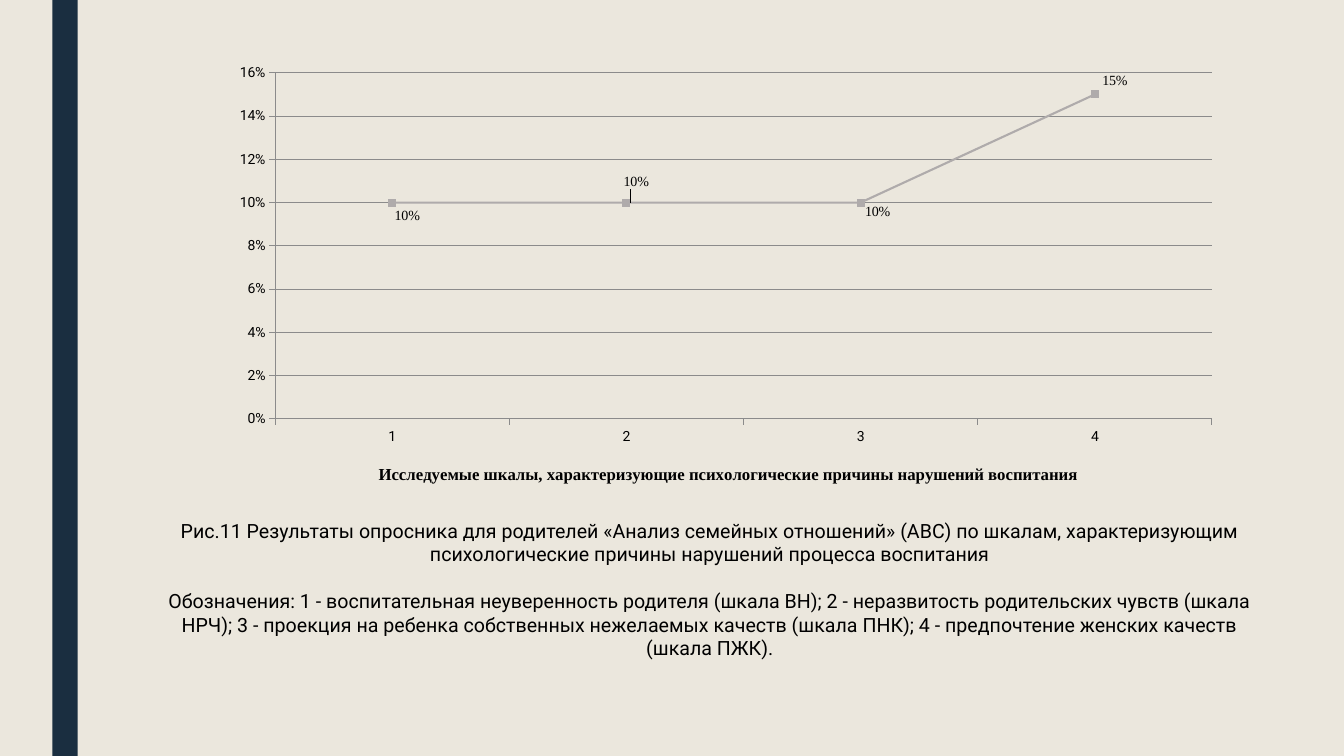
from pptx import Presentation
from pptx.chart.data import CategoryChartData
from pptx.dml.color import RGBColor
from pptx.enum.chart import XL_CHART_TYPE as ChartType
from pptx.enum.chart import XL_LABEL_POSITION as LabelPosition
from pptx.enum.chart import XL_MARKER_STYLE as MarkerStyle
from pptx.enum.chart import XL_TICK_MARK as TickMark
from pptx.enum.shapes import MSO_SHAPE as ShapeType
from pptx.enum.text import PP_ALIGN as Align
from pptx.oxml import parse_xml
from pptx.oxml.ns import nsdecls
from pptx.util import Cm, Pt

BACKGROUND = RGBColor(0xEB, 0xE7, 0xDD)
NAVY = RGBColor(0x1A, 0x2E, 0x40)
BLACK = RGBColor(0, 0, 0)
SERIES_GRAY = RGBColor(0xAF, 0xAB, 0xAB)
AXIS_GRAY = RGBColor(0x8B, 0x8B, 0x8B)

TICK_FONT = {"name": "Roboto", "size": Pt(10)}
LABEL_FONT = {"name": "Times New Roman", "size": Pt(10)}
AXIS_TITLE_FONT = {"name": "Times New Roman", "size": Pt(12), "bold": True}
CAPTION_FONT = {"name": "Roboto", "size": Pt(14)}

AXIS_TITLE = ("Исследуемые шкалы, характеризующие психологические "
              "причины нарушений воспитания")
SCALES = {"1": 0.1, "2": 0.1, "3": 0.1, "4": 0.15}
LABEL_SHIFTS = [(-0.005, 0.026), (-0.01, -0.042), (-0.003, 0.018), (0, -0.028)]
CAPTION = [
    "Рис.11 Результаты опросника для родителей «Анализ семейных отношений» (АВС) "
    "по шкалам, характеризующим психологические причины нарушений процесса воспитания",
    "Обозначения: 1 - воспитательная неуверенность родителя (шкала ВН); "
    "2 - неразвитость родительских чувств (шкала НРЧ); 3 - проекция на ребенка "
    "собственных нежелаемых качеств (шкала ПНК); 4 - предпочтение женских качеств "
    "(шкала ПЖК).",
]


def format_font(font, values):
    """Apply a dict of font attributes and the black text colour."""
    for name, value in values.items():
        setattr(font, name, value)
    font.color.rgb = BLACK


def manual_layout(**values):
    """Return a chart layout element with the given settings in order."""
    settings = "".join(f'<c:{name} val="{value}"/>' for name, value in values.items())
    return parse_xml(f'<c:layout {nsdecls("c")}><c:manualLayout>{settings}'
                     '</c:manualLayout></c:layout>')


def set_plot_layout(chart):
    """Fix the inner plot area within the chart frame."""
    plot_area = chart._chartSpace.chart.plotArea
    for layout in plot_area.findall("{*}layout"):
        plot_area.remove(layout)
    plot_area.insert(0, manual_layout(layoutTarget="inner", xMode="edge", yMode="edge",
                                      x=0.08, y=0.057, w=0.906, h=0.695))


def format_axes(chart):
    """Style both axes, the gridlines and the category title."""
    for axis in (chart.category_axis, chart.value_axis):
        axis.major_tick_mark = TickMark.OUTSIDE
        axis.minor_tick_mark = TickMark.NONE
        format_font(axis.tick_labels.font, TICK_FONT)
        axis.format.line.color.rgb = AXIS_GRAY
        axis.format.line.width = Pt(0.75)
    values = {"minimum_scale": 0, "maximum_scale": 0.16, "major_unit": 0.02,
              "has_major_gridlines": True}
    for name, value in values.items():
        setattr(chart.value_axis, name, value)
    gridline = chart.value_axis.major_gridlines.format.line
    gridline.color.rgb = AXIS_GRAY
    gridline.width = Pt(0.75)
    tick_labels = chart.value_axis.tick_labels
    tick_labels.number_format = "0%"
    tick_labels.number_format_is_linked = False

    title = chart.category_axis.axis_title
    title.text_frame.text = AXIS_TITLE
    format_font(title.text_frame.paragraphs[0].runs[0].font, AXIS_TITLE_FONT)
    for layout in title._element.findall("{*}layout"):
        title._element.remove(layout)
    title._element.find("{*}tx").addnext(
        manual_layout(xMode="edge", yMode="edge", x=0.177, y=0.836))


def format_series(chart):
    """Style the line, its markers and the shifted value labels."""
    plot = chart.plots[0]
    plot.vary_by_categories = False
    series = plot.series[0]
    series.smooth = False
    series.format.line.color.rgb = SERIES_GRAY
    series.format.line.width = Pt(1.5)
    series.marker.style = MarkerStyle.SQUARE
    series.marker.size = 5
    series.marker.format.fill.solid()
    series.marker.format.fill.fore_color.rgb = SERIES_GRAY
    series.marker.format.line.color.rgb = SERIES_GRAY

    labels = series.data_labels
    labels.show_value = True
    labels.number_format = "0%"
    labels.number_format_is_linked = False
    labels.position = LabelPosition.RIGHT
    format_font(labels.font, LABEL_FONT)
    for index, (x, y) in enumerate(LABEL_SHIFTS):
        label = series.points[index].data_label
        format_font(label.font, LABEL_FONT)
        label.position = LabelPosition.RIGHT
        element = labels._element.find(f"{{*}}dLbl[{index + 1}]")
        element.find("{*}idx").addnext(manual_layout(x=x, y=y))


def add_scale_chart(slide, left, top, width, height):
    """Place the line chart of the scales in the given box."""
    data = CategoryChartData(number_format="0%")
    data.categories = list(SCALES)
    data.add_series("Series 1", list(SCALES.values()))
    chart = slide.shapes.add_chart(ChartType.LINE_MARKERS, left, top, width, height,
                                   data).chart
    chart.has_legend = False
    chart.has_title = False
    format_font(chart.font, TICK_FONT)
    set_plot_layout(chart)
    format_axes(chart)
    format_series(chart)


def add_side_bar(slide, left, top, width, height):
    """Place the dark vertical bar in the given box."""
    bar = slide.shapes.add_shape(ShapeType.RECTANGLE, left, top, width, height)
    bar.shadow.inherit = False
    bar.fill.solid()
    bar.fill.fore_color.rgb = NAVY
    bar.line.fill.background()


def add_caption(slide, left, top, width, height):
    """Place the centred figure caption and legend in the given box."""
    text_frame = slide.shapes.add_textbox(left, top, width, height).text_frame
    text_frame.word_wrap = True
    for index, text in enumerate(CAPTION):
        paragraph = text_frame.add_paragraph() if index else text_frame.paragraphs[0]
        paragraph.text = text
        paragraph.alignment = Align.CENTER
        if index:
            paragraph.space_before = Pt(16.5)
        format_font(paragraph.runs[0].font, CAPTION_FONT)


def main():
    """Build the slide and save the presentation."""
    presentation = Presentation()
    presentation.slide_width = Cm(33.87)
    presentation.slide_height = Cm(19.05)
    slide = presentation.slides.add_slide(presentation.slide_layouts[6])
    slide.background.fill.solid()
    slide.background.fill.fore_color.rgb = BACKGROUND
    add_side_bar(slide, Cm(1.32), 0, Cm(0.64), presentation.slide_height)
    add_scale_chart(slide, Cm(4.85), Cm(1.12), Cm(26.06), Cm(12.55))
    add_caption(slide, Cm(3.96), Cm(12.95), Cm(27.86), Cm(4.01))
    presentation.save("out.pptx")


if __name__ == "__main__":
    main()
